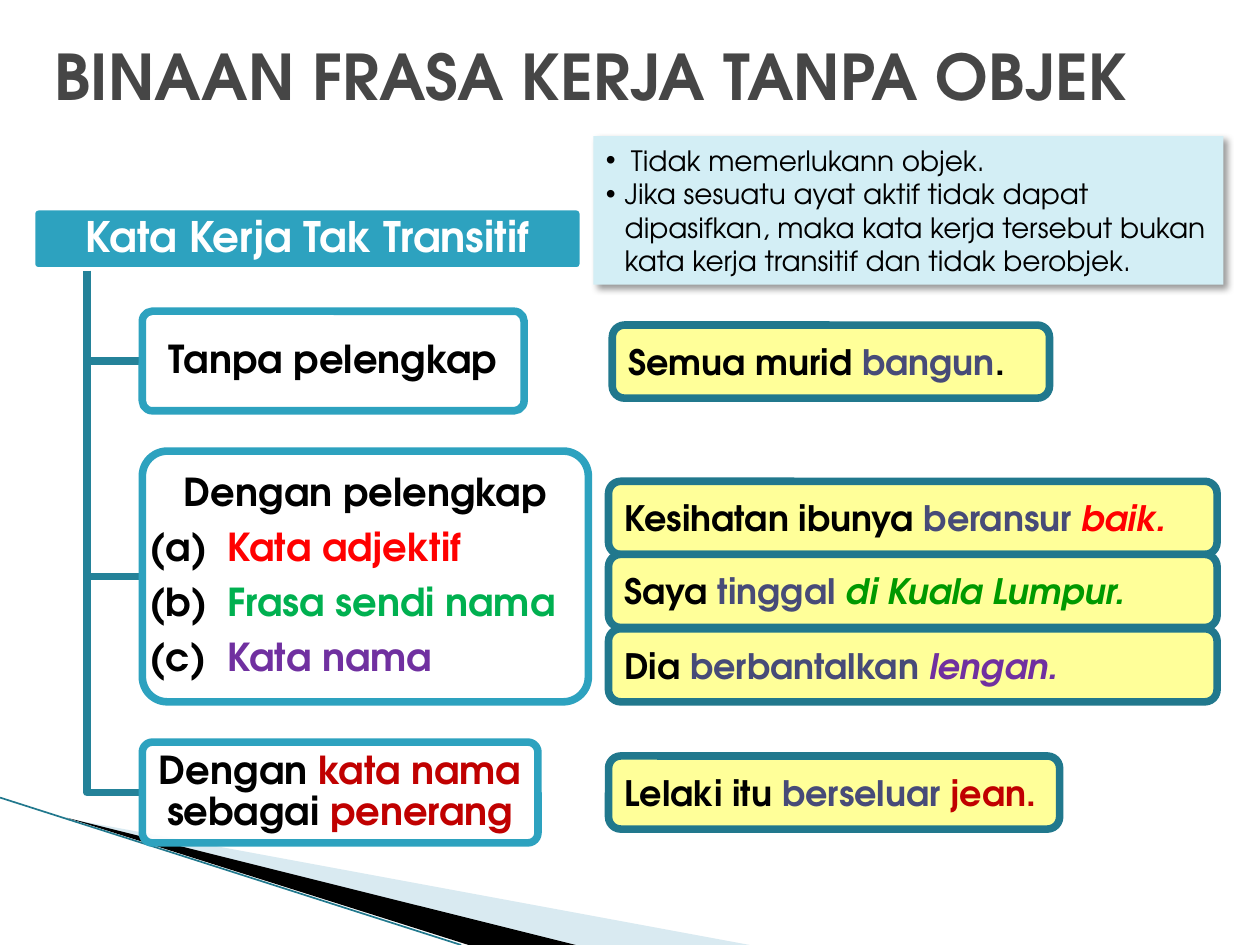
from lxml import etree
from pptx import Presentation
from pptx.dml.color import RGBColor
from pptx.enum.shapes import MSO_CONNECTOR, MSO_SHAPE
from pptx.enum.text import MSO_ANCHOR, PP_ALIGN
from pptx.oxml.ns import qn
from pptx.util import Inches, Pt

ROUND, RECT = MSO_SHAPE.ROUNDED_RECTANGLE, MSO_SHAPE.RECTANGLE
LINE = MSO_CONNECTOR.STRAIGHT
LEFT, MID = PP_ALIGN.LEFT, PP_ALIGN.CENTER
CENTRE = MSO_ANCHOR.MIDDLE

THEME = dict(
    font="TeX Gyre Adventor",
    title=36, head=24, node=22, sample=20, note=16, stroke=4.33, thin=0.95,
    grey="464646", white="FFFFFF", black="000000", teal="2DA2BF",
    link="248299", edge="21788D", pale="D3EEF5", cream="FFFF99",
    wedge="A0CBDC", verb="474B78", red="FF0000", green="00B050",
    leaf="009900", purple="7030A0", wine="C00000",
)

# A paragraph is a list of runs: (text, colour) or (text, colour, italic)
TITLE = "BINAAN FRASA KERJA TANPA OBJEK"
HEAD = "Kata Kerja Tak Transitif"
NOTES = [
    ("Tidak memerlukann objek.", 0.2),
    ("Jika sesuatu ayat aktif tidak dapat dipasifkan, maka kata kerja "
     "tersebut bukan kata kerja transitif dan tidak berobjek.", 0.15),
]
KINDS = [
    ("(a)", "Kata adjektif", "red"),
    ("(b)", "Frasa sendi nama", "green"),
    ("(c)", "Kata nama", "purple"),
]
# top, width, height, heading runs, listed kinds
NODES = [
    (2.47, 3.03, 0.79, [("Tanpa pelengkap", "black")], []),
    (3.58, 3.54, 1.99, [("Dengan pelengkap", "black")], KINDS),
    (5.89, 3.14, 0.80, [("Dengan ", "black"), ("kata nama ", "wine"),
                        ("sebagai ", "black"), ("penerang", "wine")], []),
]
# left, top, width, runs
SAMPLES = [
    (4.86, 2.58, 3.47, [("Semua murid ", "black"), ("bangun", "verb"),
                        (".", "black")]),
    (4.83, 3.82, 4.83, [("Kesihatan ibunya ", "black"),
                        ("beransur ", "verb"), ("baik.", "red", True)]),
    (4.83, 4.40, 4.83, [("Saya ", "black"), ("tinggal ", "verb"),
                        ("di Kuala Lumpur.", "leaf", True)]),
    (4.83, 4.99, 4.83, [("Dia ", "black"), ("berbantalkan ", "verb"),
                        ("lengan.", "purple", True)]),
    (4.83, 6.00, 3.58, [("Lelaki itu ", "black"), ("berseluar ", "verb"),
                        ("jean.", "wine")]),
]
WEDGES = [
    ([(0.55, 6.5), (5.95, 7.5), (4.56, 7.5)], "wedge", 40),
    ([(0.53, 6.49), (4.57, 7.5), (3.72, 7.5)], "black", 100),
]
TRUNK, BRANCH, ROOT = 0.69, 1.13, 2.15


def tone(name):
    return RGBColor.from_string(THEME[name])


def write(frame, runs, size, bold=True, align=LEFT, hang=0, bullet=None,
          lead=None, after=None, first=True):
    """Fill the first paragraph of a frame, or add a further one."""
    para = frame.paragraphs[0] if first else frame.add_paragraph()
    para.alignment = align
    if lead:
        para.line_spacing = lead
    if after:
        para.space_after = Pt(after)
    props = para._p.get_or_add_pPr()
    if hang:
        props.set("marL", str(Inches(hang)))
        props.set("indent", str(-Inches(hang)))
    if bullet:
        etree.SubElement(props, qn("a:buFont")).set("typeface", "Arial")
        etree.SubElement(props, qn("a:buChar")).set("char", bullet)
    for words, hue, *slant in runs:
        run = para.add_run()
        run.text = words
        font = run.font
        font.name, font.size = THEME["font"], Pt(THEME[size])
        font.bold, font.italic = bold, bool(slant)
        font.color.rgb = tone(hue)


def paint(shape, fill, line=None, alpha=100):
    shape.shadow.inherit = False
    shape.fill.solid()
    shape.fill.fore_color.rgb = tone(fill)
    if alpha < 100:
        hue = shape._element.spPr.find(qn("a:solidFill"))[0]
        etree.SubElement(hue, qn("a:alpha")).set("val", str(alpha * 1000))
    if line:
        shape.line.color.rgb = tone(line)
        shape.line.width = Pt(THEME["stroke"])
    else:
        shape.line.fill.background()


def box(slide, kind, area, fill, line=None, alpha=100, adj=None, inset=None):
    shape = slide.shapes.add_shape(kind, *map(Inches, area))
    paint(shape, fill, line, alpha)
    if adj is not None:
        shape.adjustments[0] = adj
    frame = shape.text_frame
    frame.word_wrap, frame.vertical_anchor = True, CENTRE
    if inset is not None:
        frame.margin_left = frame.margin_right = Inches(inset)
        frame.margin_top = frame.margin_bottom = Inches(inset)
    return shape


def trace(slide, points, close):
    start, *rest = [tuple(map(Inches, spot)) for spot in points]
    pen = slide.shapes.build_freeform(*start)
    pen.add_line_segments(rest, close=close)
    return pen.convert_to_shape()


def cast(shape):
    """Give the shape a soft shadow down to the right."""
    props = shape._element.spPr
    drop = etree.SubElement(props.find(qn("a:effectLst")), qn("a:outerShdw"))
    for key, val in (("blurRad", Pt(4)), ("dist", Pt(3)),
                     ("dir", 45 * 60000), ("rotWithShape", 0)):
        drop.set(key, str(int(val)))
    hue = etree.SubElement(drop, qn("a:srgbClr"))
    hue.set("val", THEME["black"])
    etree.SubElement(hue, qn("a:alpha")).set("val", "40000")


def decor(slide):
    for points, fill, alpha in WEDGES:
        paint(trace(slide, points, True), fill, alpha=alpha)
    rule = slide.shapes.add_connector(
        LINE, *map(Inches, (0, 6.33, 3.66, 7.5)))
    rule.line.color.rgb = tone("edge")
    rule.line.width = Pt(THEME["thin"])
    etree.SubElement(rule._element.spPr, qn("a:effectLst"))


def tree(slide):
    style = dict(lead=0.9, after=7.7)
    head = box(slide, ROUND, (0.25, 1.64, 4.38, 0.51), "teal", "white",
               adj=0.1, inset=0.03)
    write(head.text_frame, [(HEAD, "white")], "head", align=MID, **style)
    for top, width, height, runs, kinds in NODES:
        mid = top + height / 2
        elbow = trace(slide, [(TRUNK, ROOT), (TRUNK, mid), (BRANCH, mid)],
                      False)
        paint(elbow, "white", "link")
        elbow.fill.background()
        node = box(slide, ROUND, (BRANCH, top, width, height), "white",
                   "teal", alpha=90, adj=0.1, inset=0)
        frame = node.text_frame
        write(frame, runs, "node", align=MID, **style)
        for mark, name, hue in kinds:
            write(frame, [(mark + "\t", "black"), (name, hue)], "node",
                  hang=0.62, first=False, **style)


def main():
    deck = Presentation()
    deck.slide_width, deck.slide_height = Inches(10), Inches(7.5)
    slide = deck.slides.add_slide(deck.slide_layouts[5])
    decor(slide)

    title = slide.shapes.title
    title.left, title.top = Inches(0.33), Inches(0.18)
    title.width, title.height = Inches(9.33), Inches(0.83)
    title.text_frame.vertical_anchor = CENTRE
    write(title.text_frame, [(TITLE, "grey")], "title")

    tree(slide)

    note = box(slide, RECT, (4.71, 1.08, 5, 1.18), "pale")
    cast(note)
    for rank, (words, hang) in enumerate(NOTES):
        write(note.text_frame, [(words, "black")], "note", bold=False,
              hang=hang, bullet="•", first=rank == 0)

    for left, top, width, runs in SAMPLES:
        card = box(slide, ROUND, (left, top, width, 0.58), "cream", "edge")
        write(card.text_frame, runs, "sample")

    deck.save("out.pptx")


if __name__ == "__main__":
    main()
